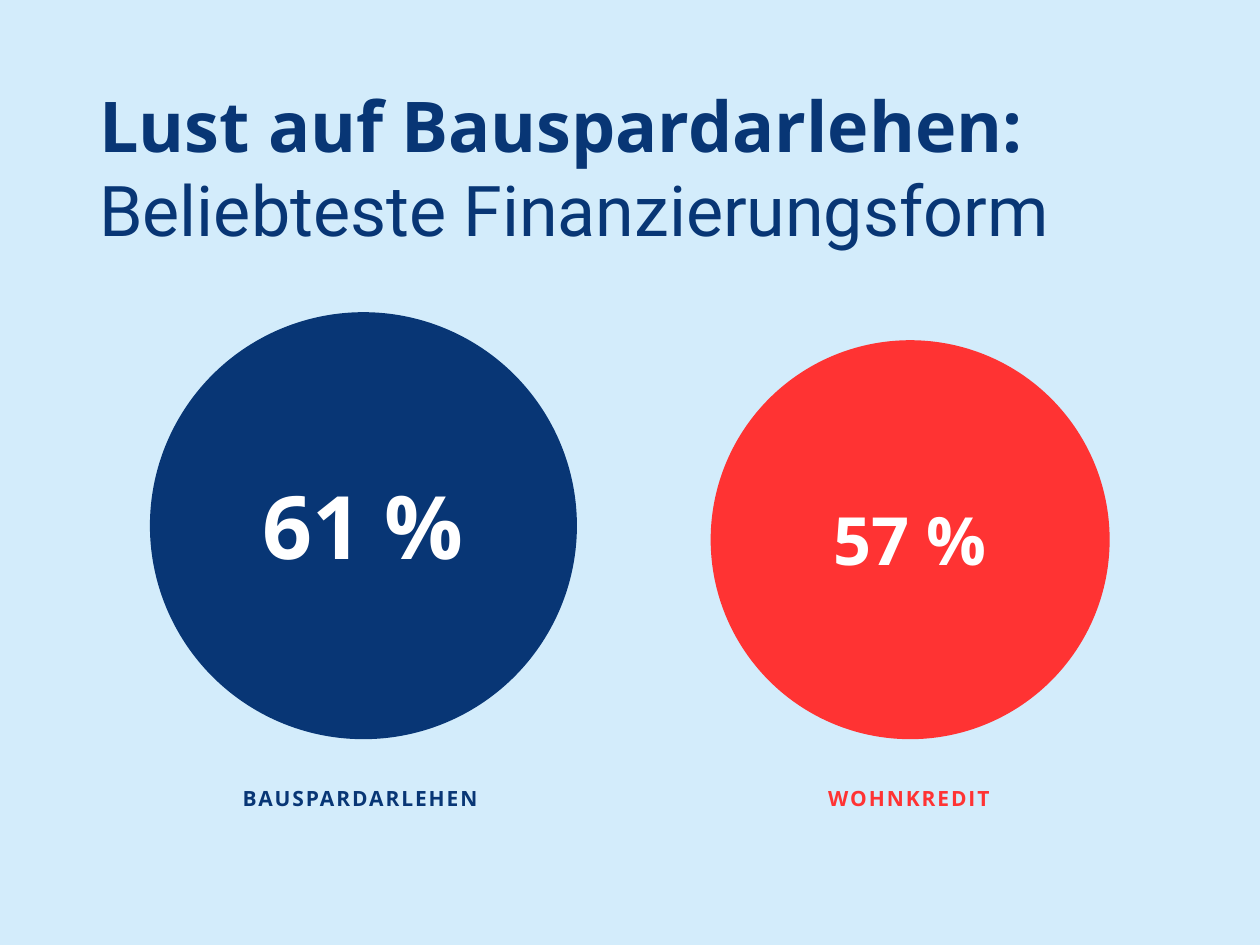
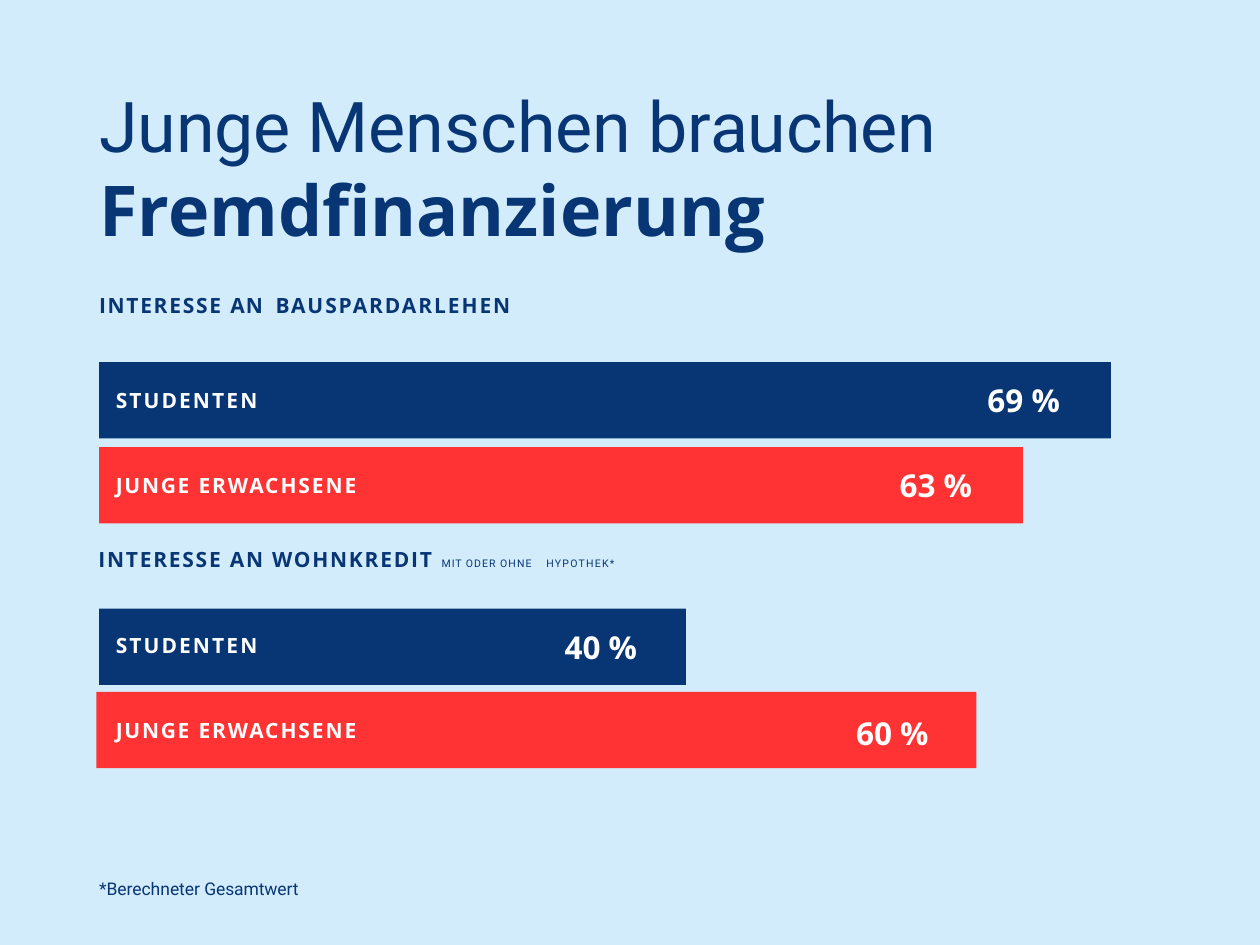
from lxml.etree import SubElement
from pptx import Presentation
from pptx.dml.color import RGBColor
from pptx.enum.shapes import MSO_SHAPE
from pptx.oxml.ns import qn
from pptx.util import Pt

NAVY, RED, SKY, WHITE = "083675", "FF3333", "D3ECFB", "FFFFFF"
BOLD = {"name": "Open Sans", "bold": True}
LIGHT = {"name": "Roboto", "bold": False}


def add_shape(s, kind, x, y, w, h, color):
    sp = s.shapes.add_shape(kind, Pt(x), Pt(y), Pt(w), Pt(h))
    sp.shadow.inherit = False
    sp.fill.solid()
    sp.fill.fore_color.rgb = RGBColor.from_string(color)
    sp.line.fill.background()


def add_text(s, x, y, w, h, lines, size, color, top=0):
    tf = s.shapes.add_textbox(Pt(x), Pt(y), Pt(w), Pt(h)).text_frame
    margins = {"margin_left": 0, "margin_top": Pt(top), "margin_right": 0,
               "margin_bottom": 0, "word_wrap": True}
    for key, value in margins.items():
        setattr(tf, key, value)
    for i, line in enumerate(lines):
        p = tf.add_paragraph() if i else tf.paragraphs[0]
        for text, style, spacing, *own_size in line:
            r = p.add_run()
            r.text = text
            for key, value in {**style, "size": Pt(own_size[0] if own_size else size)}.items():
                setattr(r.font, key, value)
            r.font.color.rgb = RGBColor.from_string(color)
            if spacing:
                r.font._element.set("spc", str(round(spacing * 100)))
    return tf


prs = Presentation()
prs.slide_width, prs.slide_height = Pt(720), Pt(540)

titles = [
    [[("Lust auf Bauspardarlehen:", BOLD, 0)],
     [("Beliebteste Finanzierungsform", LIGHT, 0)]],
    [[("Junge ", LIGHT, -0.1), ("Menschen ", LIGHT, 0), ("brauchen", LIGHT, -0.1)],
     [("Fremdfinanzierung", BOLD, 0)]],
]
slides = []
for lines in titles:
    s = prs.slides.add_slide(prs.slide_layouts[6])
    add_shape(s, MSO_SHAPE.RECTANGLE, 0, 0, 720, 540, SKY)
    add_text(s, 56.8, 22.2, 608, 222, lines, 40, NAVY, top=25.2)
    slides.append(s)
circle_slide, bar_slide = slides

circle_bottom = 422.4
circles = [
    (85.7, 244, NAVY, "61 %", 50, 150, 269.8, "BAUSPARDARLEHEN", 138.7),
    (406.1, 228, RED, "57 %", 38, 476.4, 285.1, "WOHNKREDIT", 473.3),
]
for x, d, color, value, size, value_x, value_y, label, label_x in circles:
    add_shape(circle_slide, MSO_SHAPE.OVAL, x, circle_bottom - d, d, d, color)
    add_text(circle_slide, value_x, value_y, 125, size * 1.25, [[(value, BOLD, 0)]], size, WHITE)
    add_text(circle_slide, label_x, 448.8, 160, 15, [[(label, BOLD, 1.1)]], 12, color)

students = [("STUDENTE", BOLD, 1.2), ("N", BOLD, 0)]
young_adults = [("JUNGE ", BOLD, 1), ("ERWACHSENE", BOLD, 1.1)]
bars = [
    (56.7, 206.9, 578.2, NAVY, students, 221.4, "69 %", 564.3, 217.9),
    (56.7, 255.5, 527.8, RED, young_adults, 270, "63 %", 514.1, 266.5),
    (56.7, 347.8, 335.3, NAVY, students, 361.3, "40 %", 322.7, 358.8),
    (55.1, 395.4, 502.8, RED, young_adults, 409.9, "60 %", 489.2, 407.9),
]
for x, y, w, color, label, label_y, value, value_x, value_y in bars:
    add_shape(bar_slide, MSO_SHAPE.RECTANGLE, x, y, w, 43.6, color)
    add_text(bar_slide, 66.2, label_y, 160, 15, [label], 12, WHITE)
    add_text(bar_slide, value_x, value_y, 50, 22, [[(value, BOLD, 0)]], 18, WHITE)

loan_heading = [("INTERESSE ", BOLD, 1), ("AN", BOLD, 0.6), (" ", BOLD, 3.5),
                ("BAUSPARDARLEHEN", BOLD, 1.1)]
credit_heading = [
    ("INTERESSE AN WOHNKREDIT ", BOLD, 1.03), ("MIT ", LIGHT, 0.5, 6),
    ("ODER OHNE\t", LIGHT, 0.6, 6), ("HYPOTHEK*", LIGHT, 0.7, 6),
]
add_text(bar_slide, 56.6, 167.3, 340, 15, [loan_heading], 12, NAVY)
tf = add_text(bar_slide, 56.2, 312.3, 340, 15, [credit_heading], 12, NAVY)
tabs = SubElement(tf.paragraphs[0]._p.get_or_add_pPr(), qn("a:tabLst"))
SubElement(tabs, qn("a:tab"), pos=str(Pt(256)), algn="l")

footnote = [("*Berechneter ", LIGHT, 0), ("Gesamtwert", LIGHT, -0.05)]
tf = add_text(bar_slide, 56.6, 503.1, 130, 12, [footnote], 10, NAVY)
tf.paragraphs[0].line_spacing = Pt(10.8)

prs.save("out.pptx")
